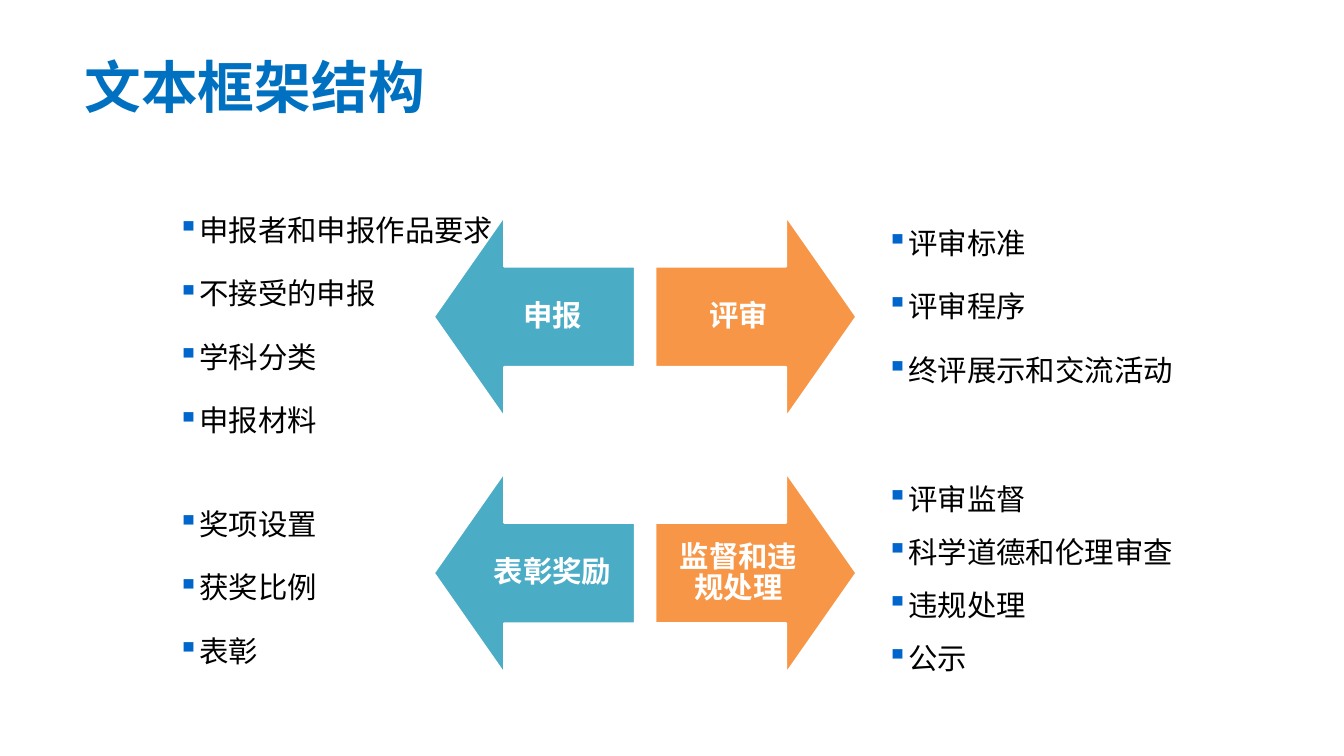
import pptx
import pptx.dml.color
import pptx.enum.shapes
import pptx.enum.text
import pptx.oxml.ns
import pptx.util
from lxml import etree

COLORS = {
    "title": "0070C0",
    "text": "000000",
    "bullet": "0066CC",
    "teal": "4BACC6",
    "orange": "F79646",
    "white": "FFFFFF",
}
FONT = "Noto Sans CJK SC"
ALIGN = pptx.enum.text.PP_ALIGN
ANCHOR = pptx.enum.text.MSO_ANCHOR


def rgb(name):
    return pptx.dml.color.RGBColor.from_string(COLORS[name])


def add_child(parent, tag, **attributes):
    return etree.SubElement(parent, pptx.oxml.ns.qn(tag), attributes)


def write_text(para, text, size=28, color="text", bold=False,
               align=ALIGN.LEFT, spacing=1.0):
    """Add one formatted span to a paragraph."""
    para.alignment = align
    para.line_spacing = spacing
    span = para.add_run()
    span.text = text
    span.font.size = pptx.util.Pt(size)
    span.font.bold = bold
    span.font.color.rgb = rgb(color)
    span.font.name = FONT
    add_child(span.font._element, "a:ea", typeface=FONT)


class SlideBuilder:
    """Places elements by percentages of the slide's width and height."""

    def __init__(self, deck):
        self.deck = deck
        self.page = deck.slides.add_slide(deck.slide_layouts[6])

    def area(self, left, top, width, height):
        across, down = self.deck.slide_width / 100, self.deck.slide_height / 100
        return (round(left * across), round(top * down),
                round(width * across), round(height * down))

    def text_box(self, shapes, area, anchor=ANCHOR.TOP, inset=None):
        frame = shapes.add_textbox(*self.area(*area)).text_frame
        frame.word_wrap = True
        frame.vertical_anchor = anchor
        if inset is not None:
            frame.margin_left = frame.margin_right = pptx.util.Inches(inset)
            frame.margin_top = frame.margin_bottom = pptx.util.Inches(inset)
        return frame

    def title(self, text):
        frame = self.text_box(self.page.shapes, (5.74, 6.7, 91.4, 9.4), ANCHOR.MIDDLE)
        write_text(frame.paragraphs[0], text, size=54, color="title", bold=True)

    def bullet_list(self, area, items, first_spacing=1.8, spacing=1.8, indent=0.2):
        frame = self.text_box(self.page.shapes, area, inset=0)
        for index, item in enumerate(items):
            para = frame.add_paragraph() if index else frame.paragraphs[0]
            properties = para._p.get_or_add_pPr()
            properties.set("marL", str(pptx.util.Inches(indent)))
            properties.set("indent", str(-pptx.util.Inches(indent)))
            bullet_color = add_child(properties, "a:buClr")
            add_child(bullet_color, "a:srgbClr", val=COLORS["bullet"])
            add_child(properties, "a:buChar", char="▪")
            write_text(para, item, spacing=spacing if index else first_spacing)

    def arrow(self, group, left, top, label_left, rotation, color, label):
        arrow = group.shapes.add_shape(
            pptx.enum.shapes.MSO_SHAPE.UP_ARROW, *self.area(left, top, 14.96, 26.6))
        arrow.adjustments[0], arrow.adjustments[1] = 0.5, 0.35
        arrow.rotation = rotation
        arrow.shadow.inherit = False
        arrow.fill.solid()
        arrow.fill.fore_color.rgb = rgb(color)
        arrow.line.color.rgb = rgb("white")
        arrow.line.width = pptx.util.Pt(2)
        # The label stays upright over the turned arrow's shaft
        frame = self.text_box(group.shapes, (label_left, top + 6.7, 12.37, 13.3),
                              ANCHOR.MIDDLE, inset=0.22)
        write_text(frame.paragraphs[0], label, color="white", bold=True,
                   align=ALIGN.CENTER, spacing=0.9)

    def arrow_pair(self, top, left_label, right_label):
        group = self.page.shapes.add_group_shape()
        self.arrow(group, 32.28, top, 34.93, 270, "teal", left_label)
        self.arrow(group, 48.76, top, 48.76, 90, "orange", right_label)


def main():
    deck = pptx.Presentation()
    deck.slide_width = pptx.util.Inches(17.78)
    deck.slide_height = pptx.util.Inches(10)
    slide = SlideBuilder(deck)
    slide.title("文本框架结构")

    # Application and review
    slide.bullet_list((13.22, 24.3, 24.35, 26.1),
                      ["申报者和申报作品要求", "不接受的申报", "学科分类", "申报材料"])
    slide.arrow_pair(28.6, "申报", "评审")
    slide.bullet_list((65.97, 26, 22.61, 26.1),
                      ["评审标准", "评审程序", "终评展示和交流活动"], indent=0.28)

    # Awards and supervision
    slide.bullet_list((13.22, 63.2, 24.35, 26.1), ["奖项设置", "获奖比例", "表彰"])
    slide.arrow_pair(62.5, "表彰奖励", "监督和违规处理")
    slide.bullet_list((65.97, 59.9, 22.61, 26.1),
                      ["评审监督", "科学道德和伦理审查", "违规处理", "公示"], spacing=1.5)

    deck.save("out.pptx")


if __name__ == "__main__":
    main()
